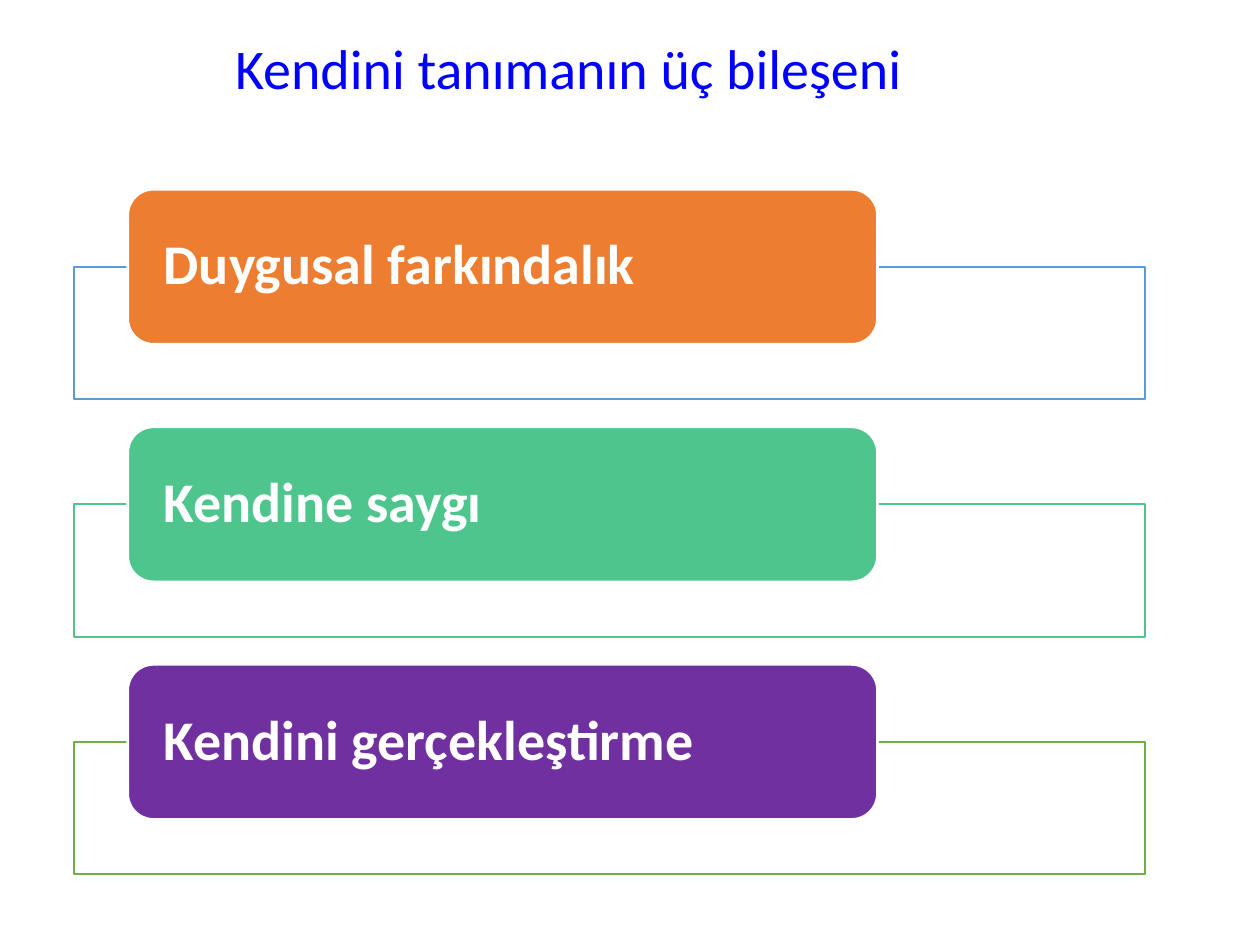
import pptx
import pptx.dml.color
import pptx.enum.shapes
import pptx.enum.text
import pptx.util
from pptx.util import Pt

COLORS = {
    "white": "FFFFFF",
    "title": "0000FF",
    "blue": "5B9BD5",
    "orange": "ED7D31",
    "mint": "4DC58D",
    "green": "70AD47",
    "purple": "7030A0",
}

# Label, label fill, frame line
COMPONENTS = [
    ("Duygusal farkındalık", "orange", "blue"),
    ("Kendine saygı", "mint", "mint"),
    ("Kendini gerçekleştirme", "purple", "green"),
]


def rgb(name):
    return pptx.dml.color.RGBColor.from_string(COLORS[name])


def write_text(shape, text, color, align, bold=False, size=32, margin=7.2):
    """Fill a shape with one vertically centred paragraph."""
    frame = shape.text_frame
    frame.word_wrap = True
    frame.auto_size = pptx.enum.text.MSO_AUTO_SIZE.NONE
    frame.vertical_anchor = pptx.enum.text.MSO_ANCHOR.MIDDLE
    frame.margin_left = frame.margin_right = Pt(margin)
    frame.margin_top = frame.margin_bottom = Pt(3.6 if margin == 7.2 else 0)
    paragraph = frame.paragraphs[0]
    paragraph.text = text
    paragraph.alignment = align
    paragraph.line_spacing = 0.9
    for run in paragraph.runs:
        run.font.name = "Calibri"
        run.font.size = Pt(size)
        run.font.bold = bold
        run.font.color.rgb = rgb(color)
    return paragraph


def add_box(slide, kind, box, fill, line, line_width):
    shape = slide.shapes.add_shape(kind, *(Pt(value) for value in box))
    shape.shadow.inherit = False
    shape.fill.solid()
    shape.fill.fore_color.rgb = rgb(fill)
    shape.line.color.rgb = rgb(line)
    shape.line.width = Pt(line_width)
    return shape


def place_title(slide, left, top, width, height):
    title = slide.shapes.title
    title.left, title.top = Pt(left), Pt(top)
    title.width, title.height = Pt(width), Pt(height)
    title.fill.solid()
    title.fill.fore_color.rgb = rgb("white")
    paragraph = write_text(title, "Kendini tanımanın üç bileşeni", "title",
                           pptx.enum.text.PP_ALIGN.CENTER)
    # The closing line break lifts the heading above the middle
    paragraph.add_line_break()
    paragraph.font.size = Pt(32)


def add_component(slide, left, top, width, height, text, fill, line):
    """Draw a frame with a label centred on its top edge."""
    shapes = pptx.enum.shapes.MSO_SHAPE
    label_height = 88.56
    frame_top = label_height / 2
    add_box(slide, shapes.RECTANGLE,
            (left, top + frame_top, width, height - frame_top),
            "white", line, 1)
    label = add_box(slide, shapes.ROUNDED_RECTANGLE,
                    (left + width * 0.05, top, width * 0.7, label_height),
                    fill, "white", 1.5)
    write_text(label, text, "white", pptx.enum.text.PP_ALIGN.LEFT,
               bold=True, margin=16.2)


def add_component_list(slide, left, top, width, height):
    row_height = 119.9
    pitch = (height - row_height) / (len(COMPONENTS) - 1)
    for index, component in enumerate(COMPONENTS):
        add_component(slide, left, top + index * pitch, width, row_height,
                      *component)


def main():
    presentation = pptx.Presentation()
    presentation.slide_width = Pt(720)
    presentation.slide_height = Pt(540)
    slide = presentation.slides.add_slide(presentation.slide_layouts[5])
    place_title(slide, 31, 15, 588, 90)
    add_component_list(slide, 42.4, 108.2, 612, 391.4)
    presentation.save("out.pptx")


if __name__ == "__main__":
    main()
